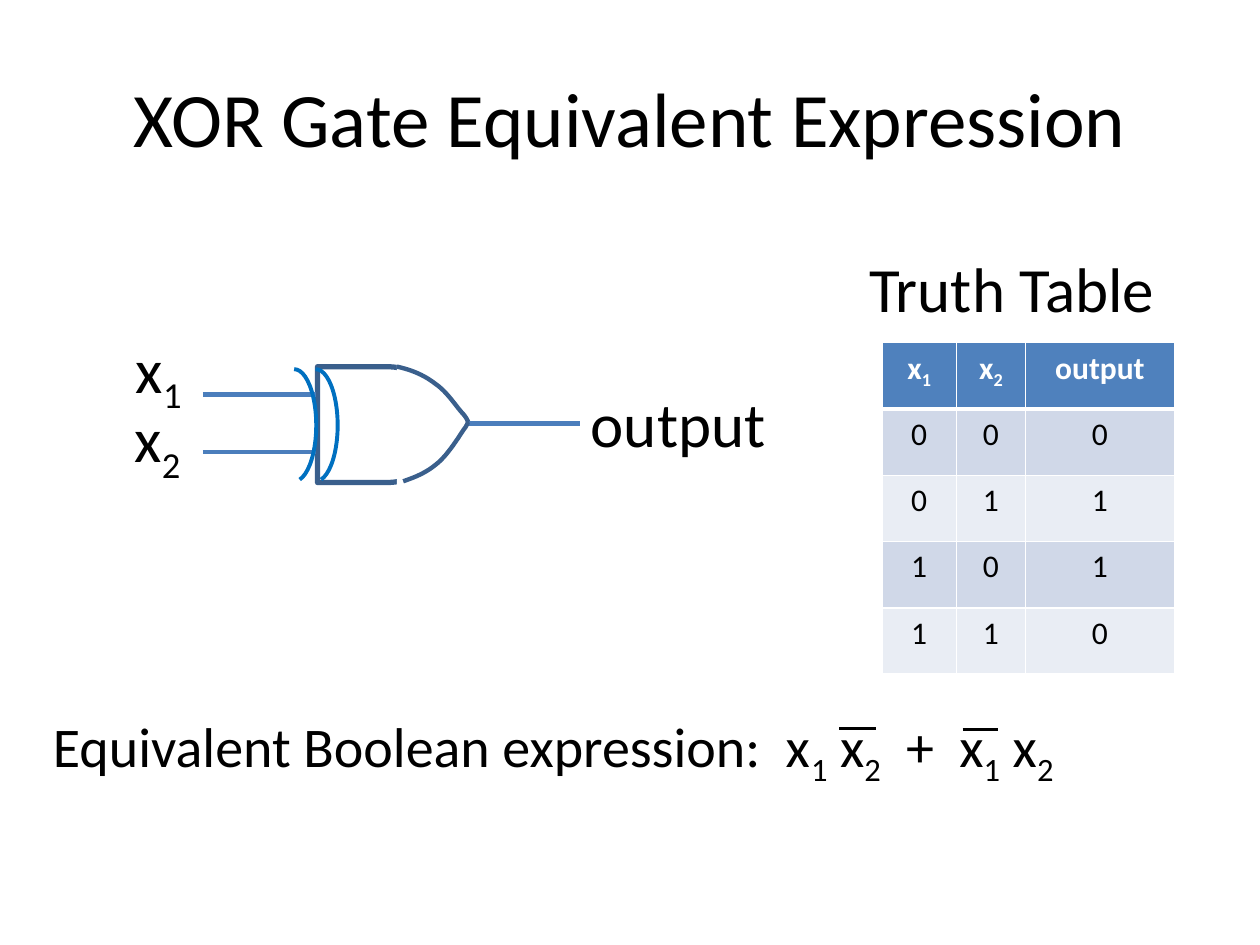
from lxml import etree
from pptx import Presentation
from pptx.dml.color import RGBColor
from pptx.enum import shapes, text
from pptx.oxml import ns
from pptx.util import Inches, Pt

BLACK = RGBColor(0x00, 0x00, 0x00)
WHITE = RGBColor(0xFF, 0xFF, 0xFF)
HEADER_BLUE = RGBColor(0x4F, 0x81, 0xBD)
BANDS = (RGBColor(0xD0, 0xD8, 0xE8), RGBColor(0xE9, 0xED, 0xF4))
WIRE_BLUE = RGBColor(0x4B, 0x7E, 0xBC)
GATE_BLUE = RGBColor(0x3A, 0x5F, 0x8C)
ARC_BLUE = RGBColor(0x00, 0x70, 0xC0)

# Content: "_" before a digit marks a subscript
TITLE = "XOR Gate Equivalent Expression"
EXPRESSION = "Equivalent Boolean expression:  x_1 x_2  +  x_1 x_2"
TRUTH_TABLE = [
    ("x_1", "x_2", "output"),
    ("0", "0", "0"),
    ("0", "1", "1"),
    ("1", "0", "1"),
    ("1", "1", "0"),
]
COLUMN_WIDTHS = (0.59, 0.55, 1.18)
TABLE_HEIGHT = 2.63
LABELS = [  # text, left, top, width, height
    ("Truth Table", 6.8, 1.93, 2.52, 0.71),
    ("x_1", 0.98, 2.57, 0.78, 0.71),
    ("x_2", 0.97, 3.12, 0.78, 0.71),
    ("output", 4.59, 3, 1.95, 0.71),
]
WIRES = [(3.7, 4.6, 3.36), (1.61, 2.51, 3.13), (1.61, 2.51, 3.59)]
OVERBARS = [(6.66, 6.95, 5.78), (7.64, 7.92, 5.79)]
# Gate nose: a start point, then cubic curves (control, control, end)
NOSE_CURVES = [
    ((3.15, 2.91), [((3.28, 2.94), (3.37, 2.98), (3.46, 3.05)),
                    ((3.55, 3.11), (3.63, 3.24), (3.68, 3.29)),
                    ((3.72, 3.34), (3.71, 3.35), (3.72, 3.35))]),
    ((3.2, 3.82), [((3.32, 3.78), (3.4, 3.74), (3.48, 3.67)),
                   ((3.56, 3.6), (3.64, 3.47), (3.68, 3.41)),
                   ((3.72, 3.36), (3.71, 3.34), (3.72, 3.35))]),
]


def write(paragraph, marked_text, size, color=BLACK, bold=False):
    head, *rest = marked_text.split("_")
    pieces = [(head, False)]
    for part in rest:
        pieces += [(part[0], True), (part[1:], False)]
    for piece, subscript in pieces:
        if not piece:
            continue
        run = paragraph.add_run()
        run.text = piece
        run.font.name, run.font.size = "Calibri", Pt(size)
        run.font.color.rgb, run.font.bold = color, bold
        if subscript:
            run._r.get_or_add_rPr().set("baseline", "-25000")


def place(shape, left, top, width, height):
    shape.left, shape.top = Inches(left), Inches(top)
    shape.width, shape.height = Inches(width), Inches(height)


def add_line(slide, start, end, y, color, width):
    line = slide.shapes.add_connector(
        shapes.MSO_CONNECTOR.STRAIGHT, Inches(start), Inches(y), Inches(end), Inches(y))
    line.line.color.rgb, line.line.width = color, Pt(width)
    etree.SubElement(line._element.spPr, ns.qn("a:effectLst"))


def outline(shape, color, width):
    shape.shadow.inherit = False
    shape.fill.background()
    shape.line.color.rgb, shape.line.width = color, Pt(width)


def add_shape(slide, kind, *box):
    return slide.shapes.add_shape(kind, *map(Inches, box))


def add_arc(slide, left):
    arc = add_shape(slide, shapes.MSO_SHAPE.ARC, left, 2.93, 0.35, 0.89)
    arc.adjustments[0], arc.adjustments[1] = 162, 50.54
    outline(arc, ARC_BLUE, 2.25)


def add_curve(slide, start, curves, steps=12):
    points, current = [], start
    for first, second, end in curves:
        for step in range(1, steps + 1):
            t = step / steps
            points.append(tuple(
                Inches((1 - t) ** 3 * a + 3 * t * (1 - t) ** 2 * b
                       + 3 * t * t * (1 - t) * c + t ** 3 * d)
                for a, b, c, d in zip(current, first, second, end)))
        current = end
    builder = slide.shapes.build_freeform(*map(Inches, start))
    builder.add_line_segments(points, close=False)
    outline(builder.convert_to_shape(), GATE_BLUE, 2.5)


def add_border(cell, side, width):
    line = etree.SubElement(cell._tc.get_or_add_tcPr(), ns.qn("a:ln" + side), w=str(Pt(width)))
    fill = etree.SubElement(line, ns.qn("a:solidFill"))
    etree.SubElement(fill, ns.qn("a:srgbClr"), val=str(WHITE))


def add_truth_table(slide):
    rows, columns = len(TRUTH_TABLE), len(COLUMN_WIDTHS)
    table = slide.shapes.add_table(
        rows, columns, Inches(7), Inches(2.72),
        Inches(sum(COLUMN_WIDTHS)), Inches(TABLE_HEIGHT)).table
    for column, width in zip(table.columns, COLUMN_WIDTHS):
        column.width = Inches(width)
    for r, values in enumerate(TRUTH_TABLE):
        table.rows[r].height = Inches(TABLE_HEIGHT / rows)
        for c, value in enumerate(values):
            cell = table.cell(r, c)
            header = r == 0
            for side in "LRTB":
                thick = (side == "B" and r == 0) or (side == "T" and r == 1)
                add_border(cell, side, 3 if thick else 1)
            cell.fill.solid()
            cell.fill.fore_color.rgb = HEADER_BLUE if header else BANDS[(r - 1) % 2]
            paragraph = cell.text_frame.paragraphs[0]
            paragraph.alignment = text.PP_ALIGN.CENTER
            write(paragraph, value, 18, WHITE if header else BLACK, header)


def main():
    presentation = Presentation()
    presentation.slide_width, presentation.slide_height = Inches(10), Inches(7.5)
    slide = presentation.slides.add_slide(presentation.slide_layouts[1])

    # Title and expression
    title, body = slide.placeholders
    place(title, 0.5, 0.3, 9, 1.25)
    write(title.text_frame.paragraphs[0], TITLE, 44)
    place(body, 0.32, 5.6, 9, 0.71)
    body.text_frame.auto_size = text.MSO_AUTO_SIZE.NONE
    paragraph = body.text_frame.paragraphs[0]
    properties = paragraph._p.get_or_add_pPr()
    properties.set("marL", "0")
    properties.set("indent", "0")
    etree.SubElement(properties, ns.qn("a:buNone"))
    write(paragraph, EXPRESSION, 32)

    # Truth table and labels
    add_truth_table(slide)
    for label, *box in LABELS:
        text_box = slide.shapes.add_textbox(*map(Inches, box))
        text_box.text_frame.word_wrap = True
        write(text_box.text_frame.paragraphs[0], label, 36)

    # XOR gate: body, wires, then a white mask under the pointed nose
    gate = add_shape(slide, shapes.MSO_SHAPE.FLOWCHART_DELAY, 2.52, 2.91, 1.08, 0.92)
    outline(gate, GATE_BLUE, 3)
    add_arc(slide, 2.33)
    for wire in WIRES:
        add_line(slide, *wire, WIRE_BLUE, 2.5)
    mask = add_shape(slide, shapes.MSO_SHAPE.RECTANGLE, 3.15, 2.88, 0.5, 0.97)
    mask.shadow.inherit = False
    mask.fill.solid()
    mask.fill.fore_color.rgb = WHITE
    mask.line.fill.background()
    for start, curves in NOSE_CURVES:
        add_curve(slide, start, curves)
    add_arc(slide, 2.16)

    # Negation bars
    for bar in OVERBARS:
        add_line(slide, *bar, BLACK, 2)

    presentation.save("out.pptx")


if __name__ == "__main__":
    main()
